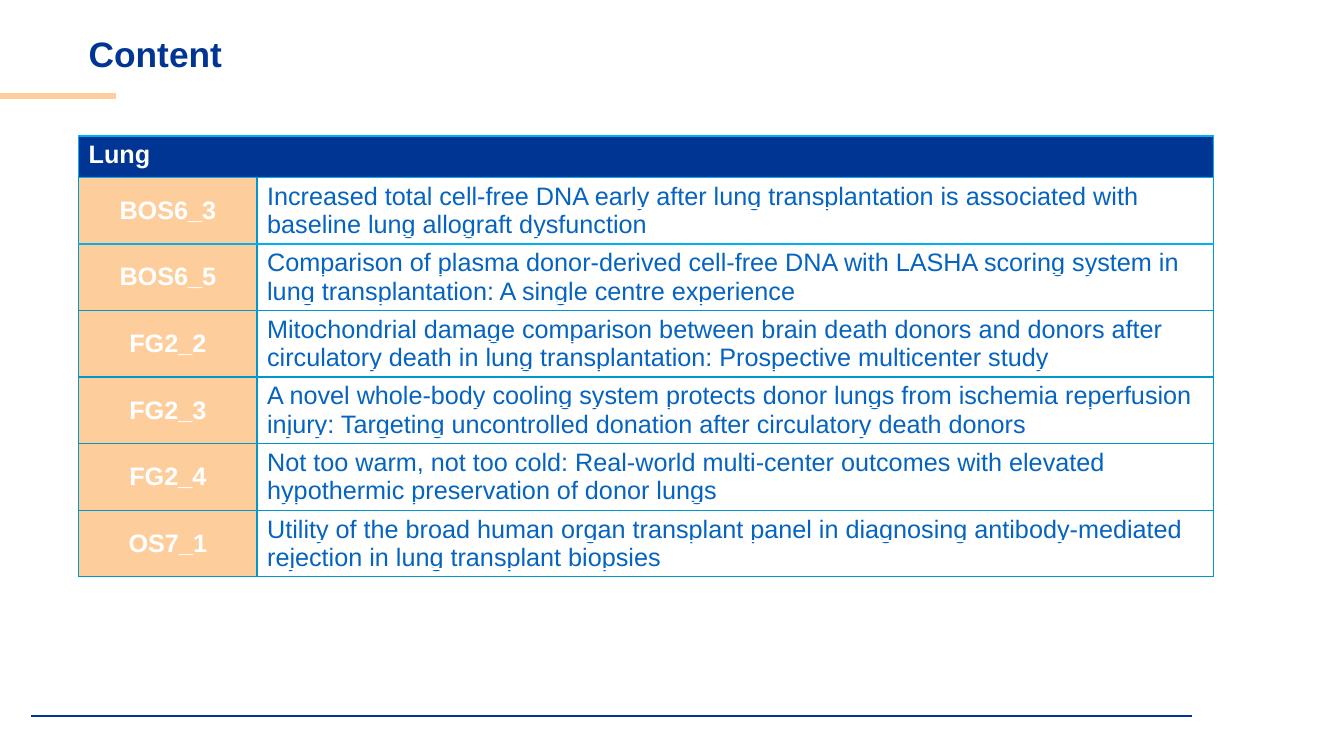
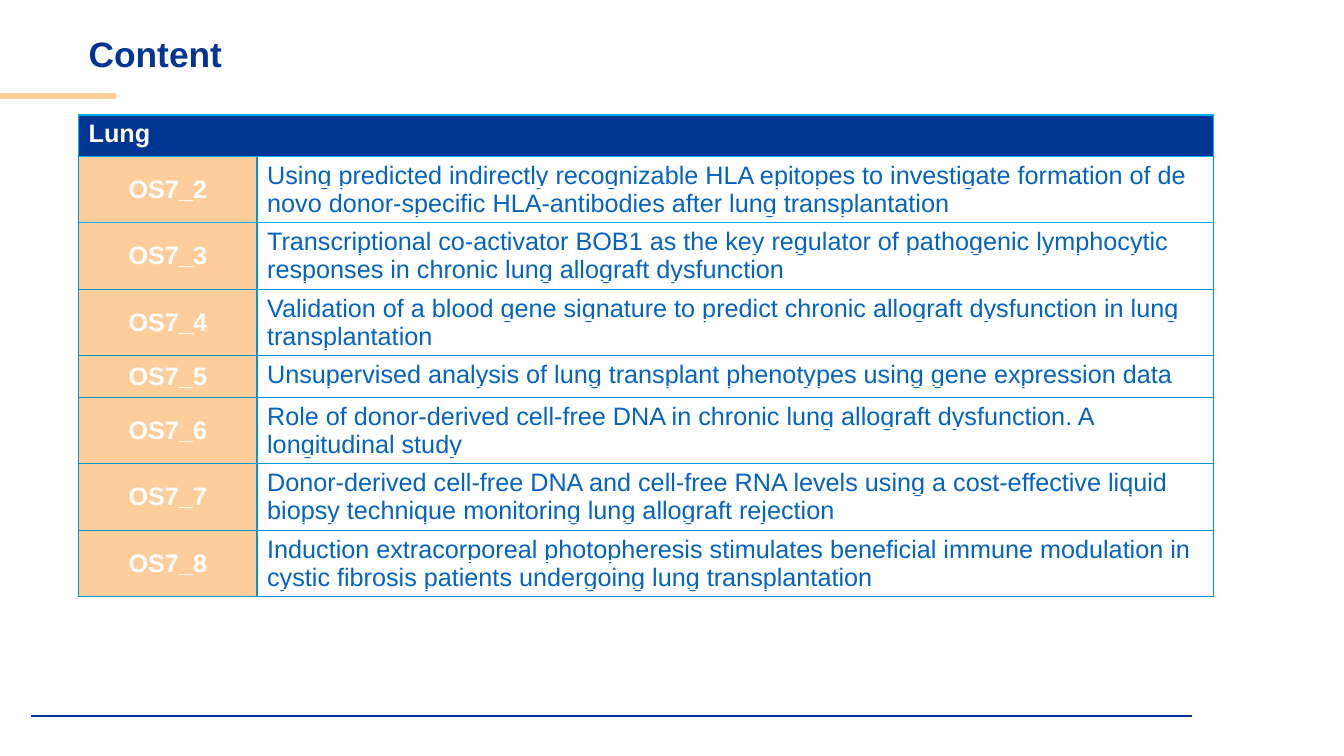
from lxml.etree import SubElement
from pptx import Presentation
from pptx.dml.color import RGBColor
from pptx.enum.shapes import MSO_CONNECTOR
from pptx.enum.text import MSO_ANCHOR, MSO_AUTO_SIZE, PP_ALIGN
from pptx.oxml.ns import qn
from pptx.util import Inches, Pt

COLORS = {
    "navy": "003594",
    "peach": "FDCE9C",
    "white": "FFFFFF",
    "link": "0563C1",
    "border": "0097CE",
    "header_border": "00B0F0",
}
FONT = "Arial"
COLUMN_WIDTHS = (1.77, 9.49)
ONE_LINE_HEIGHT, TWO_LINE_HEIGHT = 0.41, 0.66
ONE_LINE_CHARACTERS = 80

LUNG_PART_1 = [
    ("BOS6_3", "Increased total cell-free DNA early after lung transplantation is associated with "
               "baseline lung allograft dysfunction"),
    ("BOS6_5", "Comparison of plasma donor-derived cell-free DNA with LASHA scoring system in "
               "lung transplantation: A single centre experience"),
    ("FG2_2", "Mitochondrial damage comparison between brain death donors and donors after "
              "circulatory death in lung transplantation: Prospective multicenter study"),
    ("FG2_3", "A novel whole-body cooling system protects donor lungs from ischemia reperfusion "
              "injury: Targeting uncontrolled donation after circulatory death donors"),
    ("FG2_4", "Not too warm, not too cold: Real-world multi-center outcomes with elevated "
              "hypothermic preservation of donor lungs"),
    ("OS7_1", "Utility of the broad human organ transplant panel in diagnosing antibody-mediated "
              "rejection in lung transplant biopsies"),
]
LUNG_PART_2 = [
    ("OS7_2", "Using predicted indirectly recognizable HLA epitopes to investigate formation of de "
              "novo donor-specific HLA-antibodies after lung transplantation"),
    ("OS7_3", "Transcriptional co-activator BOB1 as the key regulator of pathogenic lymphocytic "
              "responses in chronic lung allograft dysfunction"),
    ("OS7_4", "Validation of a blood gene signature to predict chronic allograft dysfunction in lung "
              "transplantation"),
    ("OS7_5", "Unsupervised analysis of lung transplant phenotypes using gene expression data"),
    ("OS7_6", "Role of donor-derived cell-free DNA in chronic lung allograft dysfunction. A "
              "longitudinal study"),
    ("OS7_7", "Donor-derived cell-free DNA and cell-free RNA levels using a cost-effective liquid "
              "biopsy technique monitoring lung allograft rejection"),
    ("OS7_8", "Induction extracorporeal photopheresis stimulates beneficial immune modulation in "
              "cystic fibrosis patients undergoing lung transplantation"),
]


def rgb(name):
    return RGBColor.from_string(COLORS[name])


def format_run(run, size, color, bold):
    run.font.size = Pt(size)
    run.font.name = FONT
    run.font.bold = bold
    run.font.color.rgb = rgb(color)


def add_solid_fill(parent, color):
    fill = SubElement(parent, qn("a:solidFill"))
    SubElement(fill, qn("a:srgbClr"), val=COLORS[color])


def underline(run, color):
    """Underline a run in a colour of its own."""
    run.font.underline = True
    properties = run.font._element
    underline_fill = SubElement(properties, qn("a:uFill"))
    add_solid_fill(underline_fill, color)
    properties.find(qn("a:solidFill")).addnext(underline_fill)


# Shared layout: title place, accent under the title, footer rule
def add_layout_line(layout, slide, left, right, y, color, width):
    line = slide.shapes.add_connector(
        MSO_CONNECTOR.STRAIGHT, Inches(left), Inches(y), Inches(right), Inches(y))
    line.line.color.rgb = rgb(color)
    line.line.width = Pt(width)
    SubElement(line.element.spPr, qn("a:effectLst"))
    layout.shapes.element.append(line.element)


def style_layout(layout, slide):
    add_layout_line(layout, slide, 0, 1.15, 0.95, "peach", 4.5)
    add_layout_line(layout, slide, 0.31, 11.82, 7.1, "navy", 1.5)
    title = layout.placeholders[0]
    title.left, title.top = Inches(0.78), Inches(0.34)
    title.width, title.height = Inches(11.5), Inches(0.44)


def fill_title(slide, text):
    frame = slide.shapes.title.text_frame
    frame.text = text
    frame.auto_size = MSO_AUTO_SIZE.NONE
    frame.vertical_anchor = MSO_ANCHOR.MIDDLE
    paragraph = frame.paragraphs[0]
    paragraph.alignment = PP_ALIGN.LEFT
    paragraph.line_spacing = 0.9
    format_run(paragraph.runs[0], 25.2, "navy", True)


# Table of abstracts
def set_borders(cell, row_index):
    """The header and the first row have brighter lines than the rest."""
    bright = {"L": row_index == 0, "R": row_index == 0,
              "T": row_index <= 2, "B": row_index <= 1}
    properties = cell._tc.get_or_add_tcPr()
    for side, is_bright in bright.items():
        line = SubElement(properties, qn(f"a:ln{side}"), w=str(Pt(1)))
        add_solid_fill(line, "header_border" if is_bright else "border")


def fill_cell(cell, row_index, text, fill, color, bold=True):
    set_borders(cell, row_index)
    cell.fill.solid()
    cell.fill.fore_color.rgb = rgb(fill)
    cell.text = text
    if text:
        format_run(cell.text_frame.paragraphs[0].runs[0], 18, color, bold)


def add_abstract_table(slide, left, top, heading, abstracts):
    heights = [ONE_LINE_HEIGHT] + [
        TWO_LINE_HEIGHT if len(title) > ONE_LINE_CHARACTERS else ONE_LINE_HEIGHT
        for _, title in abstracts]
    table = slide.shapes.add_table(
        len(heights), 2, Inches(left), Inches(top),
        Inches(sum(COLUMN_WIDTHS)), Inches(sum(heights))).table
    table.horz_banding = False
    for column, width in zip(table.columns, COLUMN_WIDTHS):
        column.width = Inches(width)
    for row, height in zip(table.rows, heights):
        row.height = Inches(height)

    # Heading across both columns
    table.cell(0, 0).merge(table.cell(0, 1))
    fill_cell(table.cell(0, 0), 0, heading, "navy", "white")
    fill_cell(table.cell(0, 1), 0, "", "navy", "white")

    # One row for each abstract
    for index, (code, title) in enumerate(abstracts, start=1):
        code_cell, title_cell = table.cell(index, 0), table.cell(index, 1)
        fill_cell(code_cell, index, code, "peach", "white")
        code_cell.vertical_anchor = MSO_ANCHOR.MIDDLE
        code_cell.text_frame.paragraphs[0].alignment = PP_ALIGN.CENTER
        fill_cell(title_cell, index, title, "white", "link", bold=False)
        underline(title_cell.text_frame.paragraphs[0].runs[0], "white")


def add_content_slide(presentation, layout, table_top, abstracts):
    slide = presentation.slides.add_slide(layout)
    fill_title(slide, "Content")
    add_abstract_table(slide, 0.78, table_top, "Lung", abstracts)
    return slide


def main():
    presentation = Presentation()
    presentation.slide_width, presentation.slide_height = Inches(13.33), Inches(7.5)
    layout = presentation.slide_layouts.get_by_name("Title Only")
    first_slide = add_content_slide(presentation, layout, 1.35, LUNG_PART_1)
    style_layout(layout, first_slide)
    add_content_slide(presentation, layout, 1.14, LUNG_PART_2)
    presentation.save("out.pptx")


if __name__ == "__main__":
    main()
